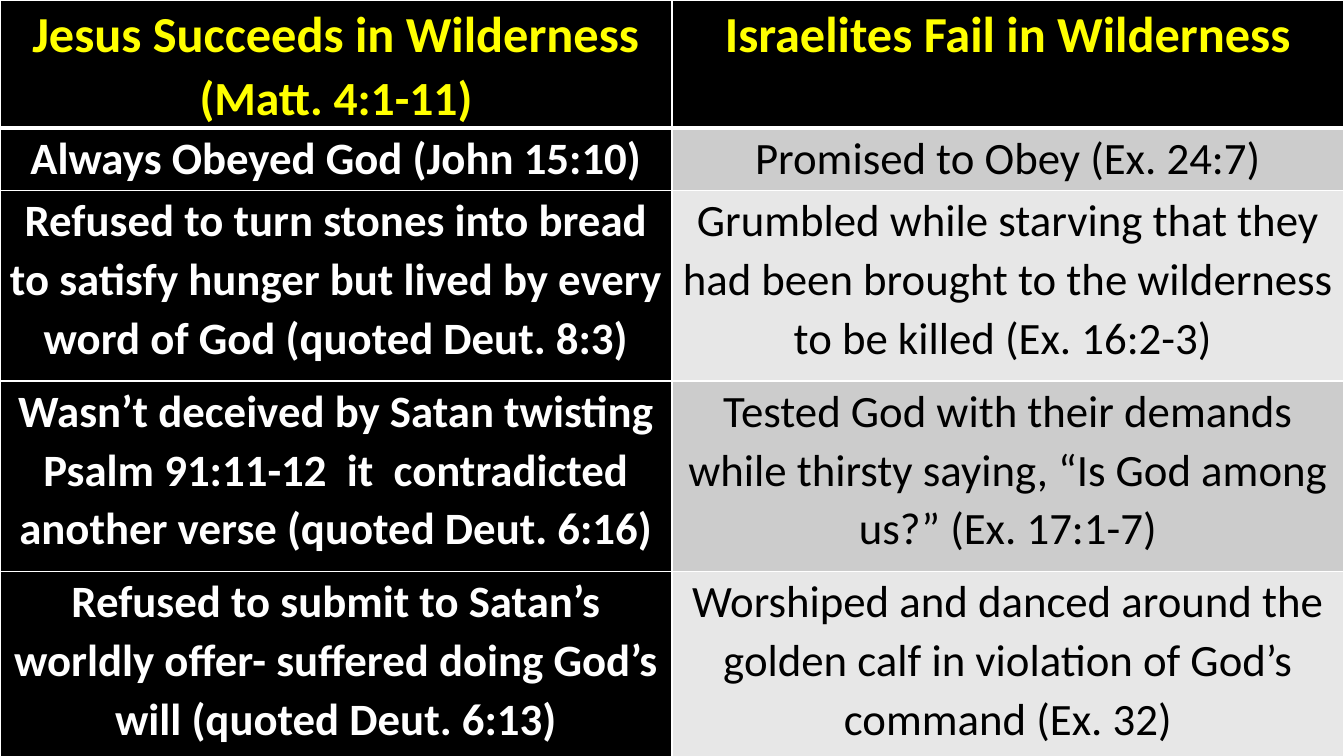
import pptx
import pptx.util
import pptx.dml.color
import pptx.enum.text
import pptx.oxml
import pptx.oxml.ns
from dataclasses import dataclass

Inches = pptx.util.Inches
Pt = pptx.util.Pt
RGB = pptx.dml.color.RGBColor.from_string


@dataclass(frozen=True)
class Theme:
    font: str = "Calibri"
    black: str = "000000"
    white: str = "FFFFFF"
    yellow: str = "FFFF00"
    bands: tuple = ("CCCCCC", "E7E7E7")
    heading_size: int = 36
    reference_size: int = 34
    body_size: int = 32
    thin_line: int = 1
    thick_line: int = 3


theme = Theme()


def add_text(para, text, size=theme.body_size, color=theme.black, bold=False):
    span = para.add_run()
    span.text = text
    span.font.name = theme.font
    span.font.size = Pt(size)
    span.font.bold = bold
    span.font.color.rgb = RGB(color)


def style_cell(cell, fill, top, bottom):
    cell.margin_left = cell.margin_right = Inches(0.07)
    cell.margin_top = cell.margin_bottom = 0
    cell.fill.solid()
    cell.fill.fore_color.rgb = RGB(fill)
    properties = cell._tc.get_or_add_tcPr()
    sides = {"lnL": theme.thin_line, "lnR": theme.thin_line, "lnT": top, "lnB": bottom}
    for position, (side, width) in enumerate(sides.items()):
        properties.insert(position, pptx.oxml.parse_xml(
            f'<a:{side} {pptx.oxml.ns.nsdecls("a")} w="{Pt(width)}">'
            f'<a:solidFill><a:srgbClr val="{theme.white}"/></a:solidFill></a:{side}>'))
    para = cell.text_frame.paragraphs[0]
    para.alignment = pptx.enum.text.PP_ALIGN.CENTER
    para.line_spacing = 1.07
    return para


headings = [
    [("Jesus Succeeds in Wilderness ", theme.heading_size), ("(Matt. 4:1-11)", theme.reference_size)],
    [("Israelites Fail in Wilderness", theme.heading_size)],
]
comparisons = [
    ("Always Obeyed God (John 15:10)",
     "Promised to Obey (Ex. 24:7)"),
    ("Refused to turn stones into bread to satisfy hunger but lived by every word of God (quoted Deut. 8:3)",
     "Grumbled while starving that they had been brought to the wilderness to be killed (Ex. 16:2-3) "),
    ("Wasn’t deceived by Satan twisting Psalm 91:11-12  it  contradicted another verse (quoted Deut. 6:16)",
     "Tested God with their demands while thirsty saying, “Is God among us?” (Ex. 17:1-7)"),
    ("Refused to submit to Satan’s worldly offer- suffered doing God’s will (quoted Deut. 6:13)",
     "Worshiped and danced around the golden calf in violation of God’s command (Ex. 32)"),
]
row_heights = [1.23, 0.62, 1.89, 1.89, 1.89]

deck = pptx.Presentation()
deck.slide_width = Inches(13.33)
deck.slide_height = Inches(7.5)
page = deck.slides.add_slide(deck.slide_layouts[6])
page.background.fill.solid()
page.background.fill.fore_color.rgb = RGB(theme.black)

table = page.shapes.add_table(
    len(row_heights), len(headings), 0, 0, deck.slide_width, Inches(sum(row_heights))).table
for row, height in zip(table.rows, row_heights):
    row.height = Inches(height)

for column, heading in enumerate(headings):
    para = style_cell(table.cell(0, column), theme.black, theme.thin_line, theme.thick_line)
    for text, size in heading:
        add_text(para, text, size=size, color=theme.yellow, bold=True)

for number, (success, failure) in enumerate(comparisons, start=1):
    top = theme.thick_line if number == 1 else theme.thin_line
    band = theme.bands[(number - 1) % len(theme.bands)]
    para = style_cell(table.cell(number, 0), theme.black, top, theme.thin_line)
    add_text(para, success, color=theme.white, bold=True)
    para = style_cell(table.cell(number, 1), band, top, theme.thin_line)
    add_text(para, failure)

deck.save("out.pptx")
